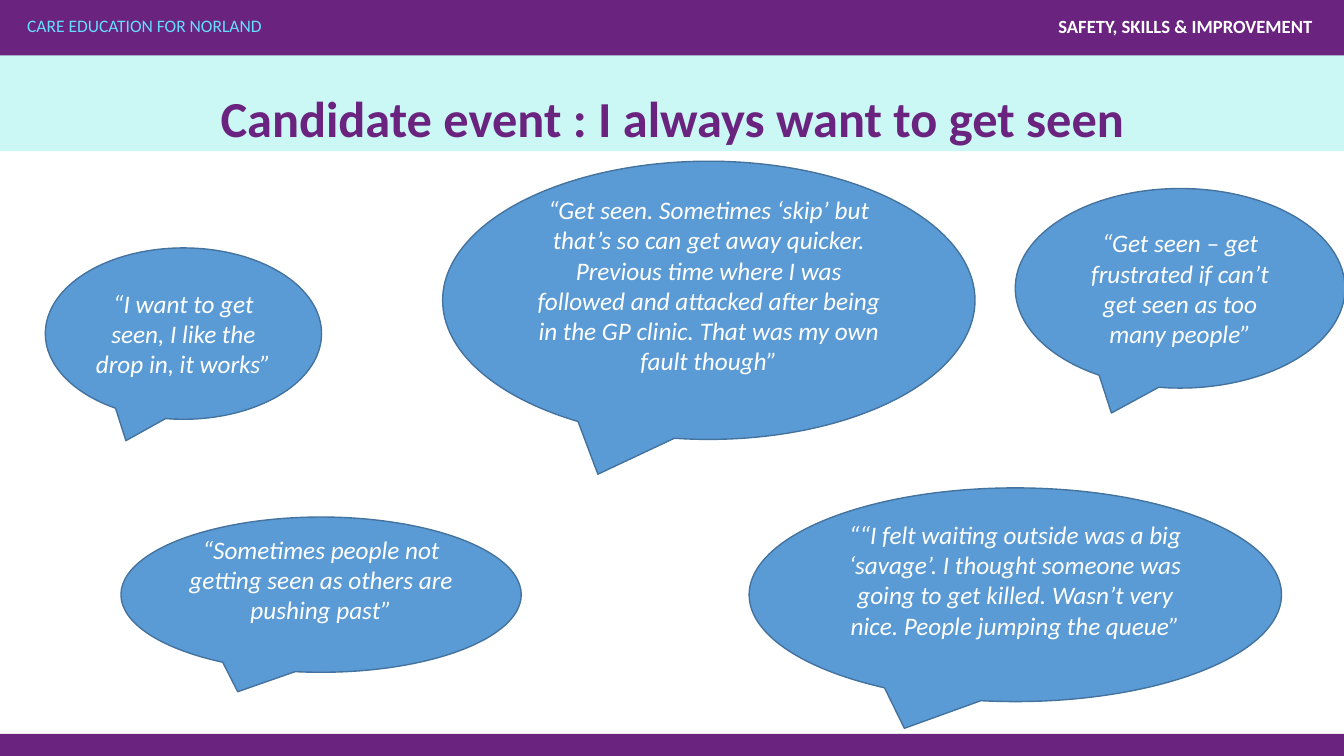
from pptx import Presentation
from pptx.dml.color import RGBColor
from pptx.enum.shapes import MSO_SHAPE as SHAPE
from pptx.enum.text import MSO_ANCHOR as ANCHOR, MSO_AUTO_SIZE as AUTO, PP_ALIGN as ALIGN
from pptx.util import Inches, Pt

COLOURS = {
    "purple": "6A2480",
    "mint": "CBF7F4",
    "sky": "66DCFF",
    "white": "FFFFFF",
    "bubble": "5B9BD5",
    "outline": "43739E",
}

BANDS = [
    (-0.02, 1.52, "mint"),
    (-0.02, 0.57, "purple"),
    (7.28, 0.23, "purple"),
]

QUOTES = [
    ((0.45, 2.46, 2.74, 1.7), 0.05,
     "“I want to get seen, I like the drop in, it works”"),
    ((1.2, 5.13, 3.97, 1.54), 0.35,
     "“Sometimes people not getting seen as others are pushing past”"),
    ((10.07, 1.87, 3.27, 1.98), 0.05,
     "“Get seen – get frustrated if can’t get seen as too many people”"),
    ((7.43, 4.84, 5.28, 2.12), 0.35,
     "““I felt waiting outside was a big ‘savage’. I thought someone was going to get "
     "killed. Wasn’t very nice. People jumping the queue”"),
    ((4.39, 1.6, 5.28, 2.76), 0.35,
     "“Get seen. Sometimes ‘skip’ but that’s so can get away quicker. Previous time "
     "where I was followed and attacked after being in the GP clinic. That was my own "
     "fault though”"),
]


def rgb(name):
    return RGBColor.from_string(COLOURS[name])


def write(tf, text, size, colour, align, **styles):
    tf.word_wrap = True
    p = tf.paragraphs[0]
    p.alignment = align
    r = p.add_run()
    r.text = text
    r.font.color.rgb = rgb(colour)
    for name, value in {"name": "Calibri", "size": Pt(size), **styles}.items():
        setattr(r.font, name, value)
    return p


def add_filled(slide, kind, box, fill, line=None):
    sp = slide.shapes.add_shape(kind, *map(Inches, box))
    sp.shadow.inherit = False
    sp.fill.solid()
    sp.fill.fore_color.rgb = rgb(fill)
    if line:
        sp.line.color.rgb = rgb(line)
        sp.line.width = Pt(1)
    else:
        sp.line.fill.background()
    return sp


def add_header(slide, box, text, size, colour, align, **styles):
    tf = slide.shapes.add_textbox(*map(Inches, box)).text_frame
    for side in ("left", "top", "right", "bottom"):
        setattr(tf, f"margin_{side}", 0)
    write(tf, text, size, colour, align, **styles)


def set_title(slide, text):
    sp = slide.shapes.title
    slide.shapes.element.append(sp.element)
    box = {"left": 0.92, "top": 0.9, "width": 11.5, "height": 0.6}
    for name, value in box.items():
        setattr(sp, name, Inches(value))
    tf = sp.text_frame
    tf.auto_size = AUTO.NONE
    tf.vertical_anchor = ANCHOR.MIDDLE
    p = write(tf, text, 36, "purple", ALIGN.CENTER, bold=True)
    p.line_spacing = 0.9


def add_bubble(slide, box, bottom, text):
    sp = add_filled(slide, SHAPE.OVAL_CALLOUT, box, "bubble", "outline")
    tf = sp.text_frame
    tf.vertical_anchor = ANCHOR.MIDDLE
    tf.margin_bottom = Inches(bottom)
    write(tf, text, 18, "white", ALIGN.CENTER, italic=True)


def main():
    prs = Presentation()
    prs.slide_width, prs.slide_height = Inches(13.33), Inches(7.5)
    slide = prs.slides.add_slide(prs.slide_layouts[5])

    for top, height, colour in BANDS:
        add_filled(slide, SHAPE.RECTANGLE, (0, top, 13.33, height), colour)
    add_header(slide, (0.27, 0.15, 5.47, 0.21), "CARE EDUCATION FOR NORLAND",
               12.5, "sky", ALIGN.LEFT)
    add_header(slide, (7.05, 0.15, 5.97, 0.22), "SAFETY, SKILLS & IMPROVEMENT",
               13.3, "white", ALIGN.RIGHT, bold=True)
    set_title(slide, "Candidate event : I always want to get seen")
    for box, bottom, text in QUOTES:
        add_bubble(slide, box, bottom, text)

    prs.save("out.pptx")


if __name__ == "__main__":
    main()
